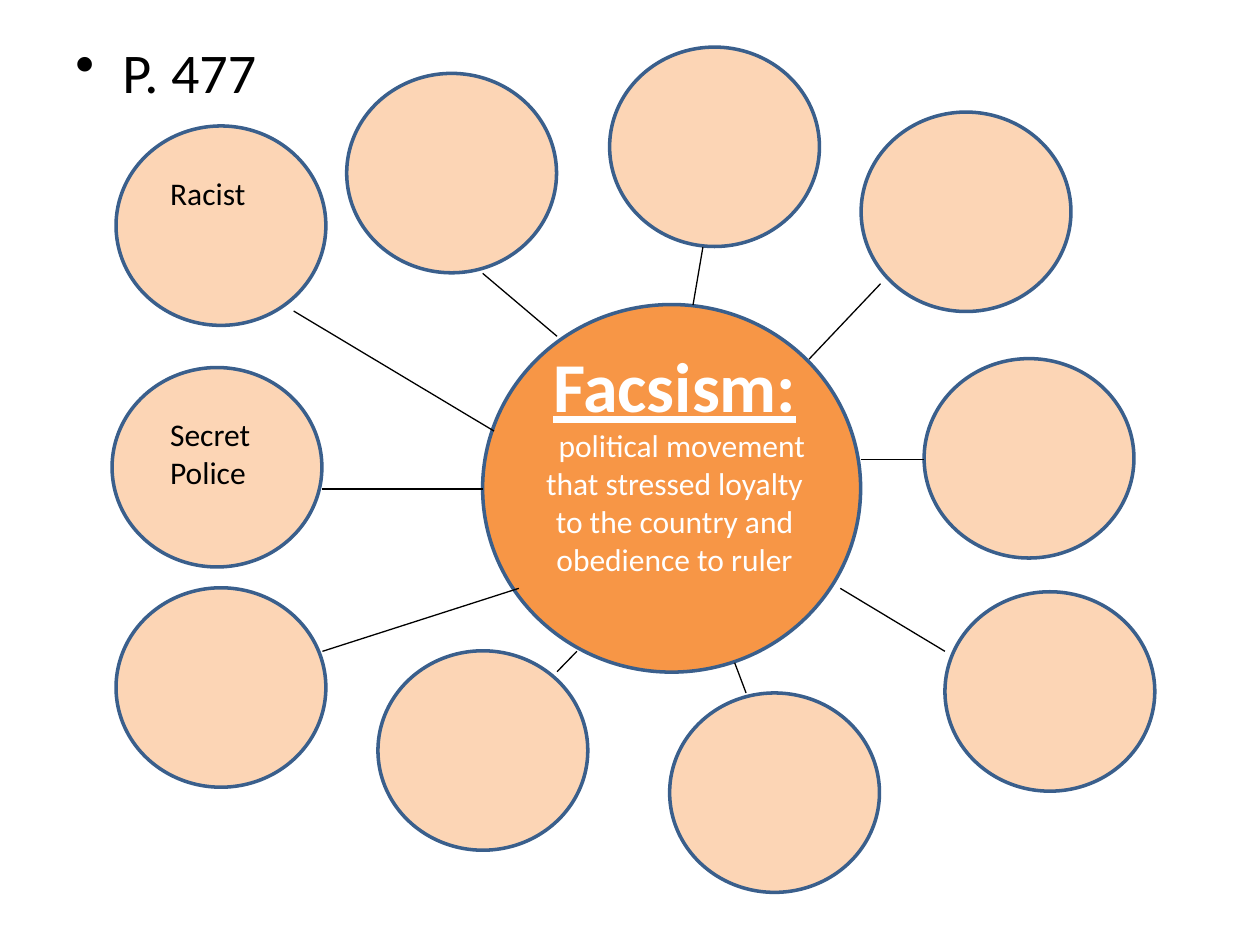
import pptx
import pptx.dml.color
import pptx.enum.shapes
import pptx.enum.text
import pptx.oxml.ns
import pptx.util
from dataclasses import dataclass
from lxml import etree

Cm, Pt = pptx.util.Cm, pptx.util.Pt
RGB = pptx.dml.color.RGBColor.from_string
SHAPE = pptx.enum.shapes.MSO_SHAPE
CENTER = pptx.enum.text.PP_ALIGN.CENTER
qn = pptx.oxml.ns.qn


@dataclass(frozen=True)
class Theme:
    font: str = "Calibri"
    hub: str = "F79646"
    bubble: str = "FCD5B5"
    outline: str = "3A5F8C"
    ink: str = "000000"
    light: str = "FFFFFF"
    heading: int = 40
    page: int = 32
    body: int = 18


THEME = Theme()
BUBBLE_W, BUBBLE_H = 4.23, 4.02

# Bubble corner, spoke start at the bubble, spoke end at the hub, label lines
# (cm, measured from the corner of the web), clockwise
BUBBLES = [
    ((0.08, 1.59), (3.66, 5.32), (7.7, 7.74), ["Racist"]),
    ((4.73, 0.53), (7.47, 4.56), (8.97, 5.83), []),
    ((10.03, 0), (11.91, 4.03), (11.71, 5.2), []),
    ((15.1, 1.31), (15.49, 4.77), (14.05, 6.29), []),
    ((16.37, 6.28), (16.36, 8.32), (15.09, 8.32), []),
    ((16.79, 10.98), (16.79, 12.18), (14.68, 10.91), []),
    ((11.24, 13.02), (12.78, 13.02), (12.55, 12.41), []),
    ((5.36, 12.17), (8.97, 12.59), (9.37, 12.18), []),
    ((0.08, 10.9), (4.24, 12.18), (8.2, 10.91), []),
    ((0, 6.46), (4.24, 8.91), (7.47, 8.91), ["Secret", "Police"]),
]


def add_text(s, box, lines, size, color, align=None):
    """Add a wrapping text box and return its paragraphs."""
    tf = s.shapes.add_textbox(*map(Cm, box)).text_frame
    tf.word_wrap = True
    tf.text = "\n".join(lines)
    for p in tf.paragraphs:
        p.alignment = align
        p.font.name = THEME.font
        p.font.size = Pt(size)
        p.font.color.rgb = RGB(color)
    return tf.paragraphs


def add_ellipse(s, box, fill):
    sp = s.shapes.add_shape(SHAPE.OVAL, *map(Cm, box))
    sp.shadow.inherit = False
    sp.fill.solid()
    sp.fill.fore_color.rgb = RGB(fill)
    sp.line.color.rgb = RGB(THEME.outline)
    sp.line.width = Pt(2)


def add_spoke(s, start, end):
    line = s.shapes.add_connector(pptx.enum.shapes.MSO_CONNECTOR.STRAIGHT,
                                  *map(Cm, start + end))
    line.line.color.rgb = RGB(THEME.ink)
    line.line.width = Pt(0.75)
    etree.SubElement(line._element.spPr, qn("a:effectLst"))


def page_reference(s, box):
    p = add_text(s, box, ["P. 477"], THEME.page, THEME.ink)[0]
    p.space_before = Pt(6.4)
    pPr = p._p.get_or_add_pPr()
    pPr.set("marL", str(Cm(0.95)))
    pPr.set("indent", str(-Cm(0.95)))
    bullet = etree.Element(qn("a:buChar"), char="•")
    pPr.find(qn("a:spcBef")).addnext(bullet)


def hub(s, box):
    x, y, w, h = box
    add_ellipse(s, box, THEME.hub)
    title, definition = add_text(
        s, (x + 0.96, y + 0.64, w - 1.8, h - 0.83),
        ["Facsism:", "political movement that stressed loyalty to the country "
                     "and obedience to ruler"],
        THEME.body, THEME.light, CENTER)
    title.font.size = Pt(THEME.heading)
    title.font.bold = True
    title.font.underline = True
    definition._p.get_or_add_pPr().set("indent", str(Cm(0.29)))


def concept_web(s, box):
    left, top, _, _ = box

    def place(point):
        return left + point[0], top + point[1]

    hub(s, place((7.47, 5.19)) + (7.62, 7.41))
    for corner, start, end, label in BUBBLES:
        add_ellipse(s, place(corner) + (BUBBLE_W, BUBBLE_H), THEME.bubble)
        add_spoke(s, place(start), place(end))
        if label:
            label_box = place((0.92, corner[1] + 0.84)) + (2.74, 0.25 + 0.77 * len(label))
            add_text(s, label_box, label, THEME.body, THEME.ink)


def main():
    prs = pptx.Presentation()
    prs.slide_width, prs.slide_height = Cm(25.4), Cm(19.05)
    s = prs.slides.add_slide(prs.slide_layouts[6])
    page_reference(s, (1.27, 0.64, 22.86, 16.38))
    concept_web(s, (2.26, 0.95, 21.02, 17.04))
    prs.save("out.pptx")


if __name__ == "__main__":
    main()
